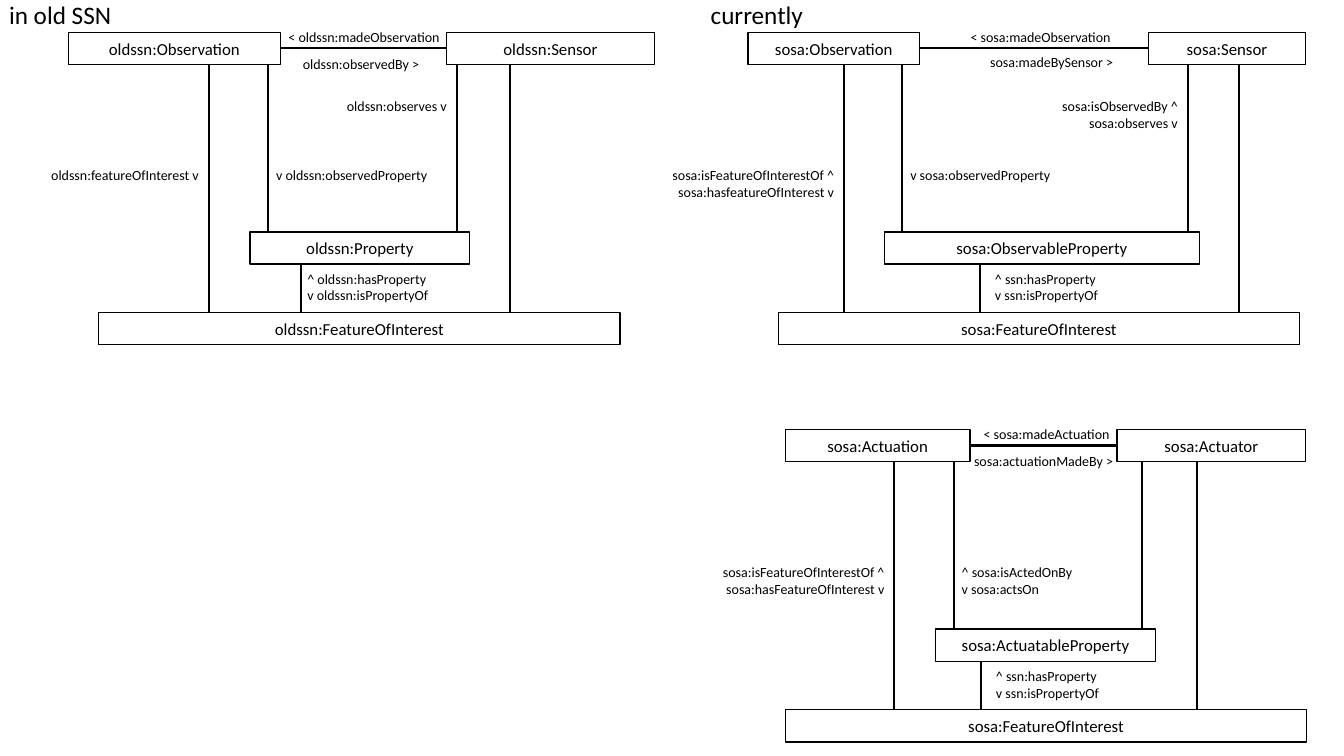
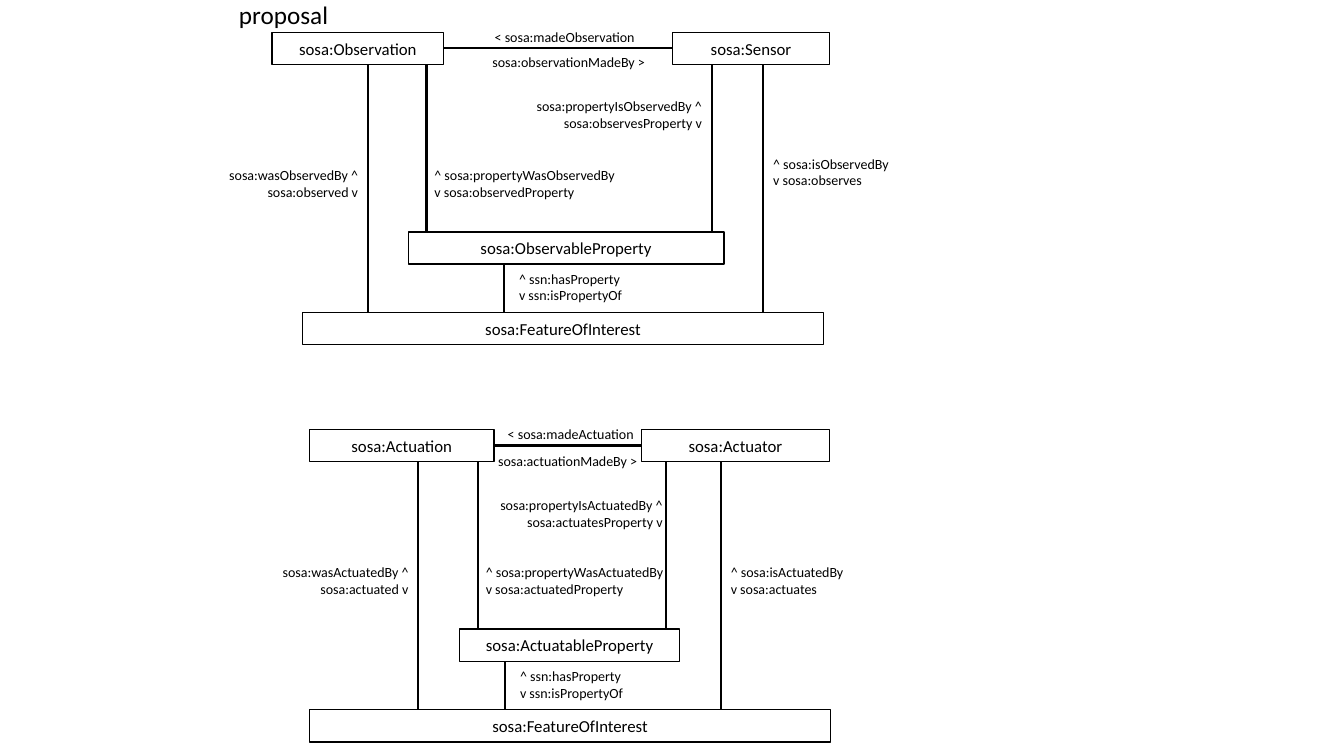
from dataclasses import dataclass

from lxml import etree
from pptx import Presentation
from pptx.dml.color import RGBColor
from pptx.enum.shapes import MSO_CONNECTOR, MSO_SHAPE
from pptx.enum.text import MSO_ANCHOR, PP_ALIGN
from pptx.oxml.ns import qn
from pptx.util import Inches, Pt

LEFT, CENTER, RIGHT = PP_ALIGN.LEFT, PP_ALIGN.CENTER, PP_ALIGN.RIGHT
TOP, MIDDLE = MSO_ANCHOR.TOP, MSO_ANCHOR.MIDDLE
RECTANGLE, STRAIGHT = MSO_SHAPE.RECTANGLE, MSO_CONNECTOR.STRAIGHT
TITLE_ONLY = 5
LEFT_SIDE, RIGHT_SIDE = 1, 3

FONT, BLACK, WHITE = "Calibri", "000000", "FFFFFF"
TITLE_SIZE, BOX_SIZE, LABEL_SIZE = 18, 12, 10
TITLE_TOP, TITLE_HEIGHT = -0.06, 0.4
BOX_HEIGHT = 0.32
PROPERTY_ROW, FEATURE_ROW = 1.98, 2.78
OBSERVATION_TOP, ACTUATION_TOP = 0.32, 4.26
PROPOSAL_SHIFT = -4.72

# Label role: horizontal offset from its anchor, offset from diagram top, alignment
LABEL_PLACES = {
    "made": (0, -0.09, CENTER),
    "made by": (0, 0.18, CENTER),
    "event to feature": (0, 1.28, RIGHT),
    "event to property": (-0.02, 1.28, LEFT),
    "agent to property": (0, 0.6, RIGHT),
    "agent to feature": (0, 1.28, LEFT),
    "property to feature": (0.05, 2.31, LEFT),
}


@dataclass
class Layout:
    """Boxes as (left, width), and the x at which each link and label is anchored."""
    top: float
    event: tuple
    agent: tuple
    property: tuple
    feature: tuple
    anchors: dict


@dataclass
class Label:
    role: str
    width: float
    lines: list
    dx: float = 0
    dy: float = 0


def anchors(*positions):
    return dict(zip(LABEL_PLACES, positions))


OLD = Layout(OBSERVATION_TOP, (0.68, 2.1), (4.43, 2.06), (2.48, 2.18), (0.98, 5.17),
             anchors(3.61, 3.58, 2.07, 2.66, 4.53, 5.06, 2.99))
OBSERVATION = Layout(OBSERVATION_TOP, (7.42, 1.7), (11.39, 1.56), (8.77, 3.13), (7.72, 5.17),
                     anchors(10.32, 10.43, 8.37, 8.95, 11.78, 12.29, 9.72))
ACTUATION = Layout(ACTUATION_TOP, (7.79, 1.83), (11.08, 1.87), (9.28, 2.18), (7.79, 5.17),
                   anchors(10.38, 10.35, 8.87, 9.46, 11.33, 11.87, 9.73))

OLD_NAMES = ["oldssn:Observation", "oldssn:Sensor", "oldssn:Property",
             "oldssn:FeatureOfInterest"]
OBSERVATION_NAMES = ["sosa:Observation", "sosa:Sensor", "sosa:ObservableProperty",
                     "sosa:FeatureOfInterest"]
ACTUATION_NAMES = ["sosa:Actuation", "sosa:Actuator", "sosa:ActuatableProperty",
                   "sosa:FeatureOfInterest"]

HAS_PROPERTY = Label("property to feature", 1.23, ["^ ssn:hasProperty", "v ssn:isPropertyOf"])
MADE_OBSERVATION = Label("made", 1.61, ["< sosa:madeObservation"])
ACTUATION_SHARED = [
    Label("made", 1.47, ["< sosa:madeActuation"]),
    Label("made by", 1.6, ["sosa:actuationMadeBy >"]),
    HAS_PROPERTY,
]

OLD_LABELS = [
    Label("made", 1.72, ["< oldssn:madeObservation"]),
    Label("made by", 1.37, ["oldssn:observedBy >"]),
    Label("event to feature", 1.7, ["oldssn:featureOfInterest v"]),
    Label("event to property", 1.72, ["v oldssn:observedProperty"]),
    Label("agent to property", 1.2, ["oldssn:observes v"]),
    Label("property to feature", 1.41, ["^ oldssn:hasProperty", "v oldssn:isPropertyOf"], -0.09),
]
CURRENT_OBSERVATION_LABELS = [
    MADE_OBSERVATION,
    Label("made by", 1.44, ["sosa:madeBySensor >"], dy=-0.02),
    Label("event to feature", 1.83,
          ["sosa:isFeatureOfInterestOf ^", "sosa:hasfeatureOfInterest v"]),
    Label("event to property", 1.61, ["v sosa:observedProperty"]),
    Label("agent to property", 1.36, ["sosa:isObservedBy ^", "sosa:observes v"]),
    HAS_PROPERTY,
]
CURRENT_ACTUATION_LABELS = ACTUATION_SHARED + [
    Label("event to feature", 1.83,
          ["sosa:isFeatureOfInterestOf ^", "sosa:hasFeatureOfInterest v"]),
    Label("event to property", 1.34, ["^ sosa:isActedOnBy", "v sosa:actsOn"]),
]
PROPOSED_OBSERVATION_LABELS = [
    MADE_OBSERVATION,
    Label("made by", 1.74, ["sosa:observationMadeBy >"], -0.07, -0.02),
    Label("event to feature", 1.5, ["sosa:wasObservedBy ^", "sosa:observed v"]),
    Label("event to property", 2.02,
          ["^ sosa:propertyWasObservedBy", "v sosa:observedProperty"]),
    Label("agent to property", 1.9,
          ["sosa:propertyIsObservedBy ^", "sosa:observesProperty v"]),
    Label("agent to feature", 1.36, ["^ sosa:isObservedBy", "v sosa:observes"], dy=-0.11),
    HAS_PROPERTY,
]
PROPOSED_ACTUATION_LABELS = ACTUATION_SHARED + [
    Label("event to feature", 1.47, ["sosa:wasActuatedBy ^", "sosa:actuated v"]),
    Label("event to property", 2.03,
          ["^ sosa:propertyWasActuatedBy", "v sosa:actuatedProperty"]),
    Label("agent to property", 1.84,
          ["sosa:propertyIsActuatedBy ^", "sosa:actuatesProperty v"], 0.06, 0.02),
    Label("agent to feature", 1.33, ["^ sosa:isActuatedBy", "v sosa:actuates"]),
]


def color(value):
    return RGBColor.from_string(value)


def write(shape, lines, size, alignment, anchor=TOP):
    frame = shape.text_frame
    frame.text = "\n".join(lines)
    frame.word_wrap = False
    frame.vertical_anchor = anchor
    for paragraph in frame.paragraphs:
        paragraph.alignment = alignment
        for run in paragraph.runs:
            run.font.name = FONT
            run.font.size = Pt(size)
            run.font.color.rgb = color(BLACK)


def add_text(slide, lines, left, top, width, height, size, alignment=LEFT):
    shape = slide.shapes.add_textbox(Inches(left), Inches(top), Inches(width), Inches(height))
    write(shape, lines, size, alignment)


def add_titled_slide(presentation, title, left, width):
    slide = presentation.slides.add_slide(presentation.slide_layouts[TITLE_ONLY])
    shape = slide.shapes.title
    shape.left, shape.top = Inches(left), Inches(TITLE_TOP)
    shape.width, shape.height = Inches(width), Inches(TITLE_HEIGHT)
    write(shape, [title], TITLE_SIZE, LEFT)
    return slide


def add_box(slide, name, left, top, width):
    box = slide.shapes.add_shape(RECTANGLE, Inches(left), Inches(top),
                                 Inches(width), Inches(BOX_HEIGHT))
    box.shadow.inherit = False
    box.fill.solid()
    box.fill.fore_color.rgb = color(WHITE)
    box.line.color.rgb = color(BLACK)
    box.line.width = Pt(1)
    write(box, [name], BOX_SIZE, CENTER, MIDDLE)
    return box


def add_link(slide, x1, y1, x2, y2):
    link = slide.shapes.add_connector(STRAIGHT, Inches(x1), Inches(y1), Inches(x2), Inches(y2))
    link.line.color.rgb = color(BLACK)
    link.line.width = Pt(1.5)
    etree.SubElement(link._element.spPr, qn("a:effectLst"))
    return link


def add_label(slide, label, anchor, top):
    dx, dy, alignment = LABEL_PLACES[label.role]
    share = {LEFT: 0, CENTER: 0.5, RIGHT: 1}[alignment]
    left = anchor + dx + label.dx - share * label.width
    height = 0.1 + 0.17 * len(label.lines)
    add_text(slide, label.lines, left, top + dy + label.dy, label.width, height,
             LABEL_SIZE, alignment)


def add_diagram(slide, layout, names, labels, shift=0):
    """Draw the four boxes, their links and the labels, moved sideways by shift."""
    top = layout.top
    bottom = top + BOX_HEIGHT
    property_top, feature_top = top + PROPERTY_ROW, top + FEATURE_ROW
    places = [(layout.event, top), (layout.agent, top),
              (layout.property, property_top), (layout.feature, feature_top)]
    event, agent = [add_box(slide, name, left + shift, y, width)
                    for name, ((left, width), y) in zip(names, places)][:2]

    made = add_link(slide, 0, 0, 0, 0)
    made.begin_connect(event, RIGHT_SIDE)
    made.end_connect(agent, LEFT_SIDE)
    spans = {
        "event to feature": (bottom, feature_top),
        "event to property": (bottom, property_top),
        "agent to property": (bottom, property_top),
        "agent to feature": (bottom, feature_top),
        "property to feature": (property_top + BOX_HEIGHT, feature_top),
    }
    for role, (start, end) in spans.items():
        x = layout.anchors[role] + shift
        add_link(slide, x, start, x, end)
    for label in labels:
        add_label(slide, label, layout.anchors[label.role] + shift, top)


def main():
    presentation = Presentation()
    presentation.slide_width, presentation.slide_height = Inches(13.33), Inches(7.5)

    slide = add_titled_slide(presentation, "in old SSN", -0.01, 1.23)
    add_text(slide, ["currently"], 6.95, TITLE_TOP, 1.13, TITLE_HEIGHT, TITLE_SIZE)
    add_diagram(slide, OLD, OLD_NAMES, OLD_LABELS)
    add_diagram(slide, OBSERVATION, OBSERVATION_NAMES, CURRENT_OBSERVATION_LABELS)
    add_diagram(slide, ACTUATION, ACTUATION_NAMES, CURRENT_ACTUATION_LABELS)

    slide = add_titled_slide(presentation, "proposal", 2.27, 1.1)
    add_diagram(slide, OBSERVATION, OBSERVATION_NAMES, PROPOSED_OBSERVATION_LABELS,
                PROPOSAL_SHIFT)
    add_diagram(slide, ACTUATION, ACTUATION_NAMES, PROPOSED_ACTUATION_LABELS, PROPOSAL_SHIFT)

    presentation.save("out.pptx")


if __name__ == "__main__":
    main()
